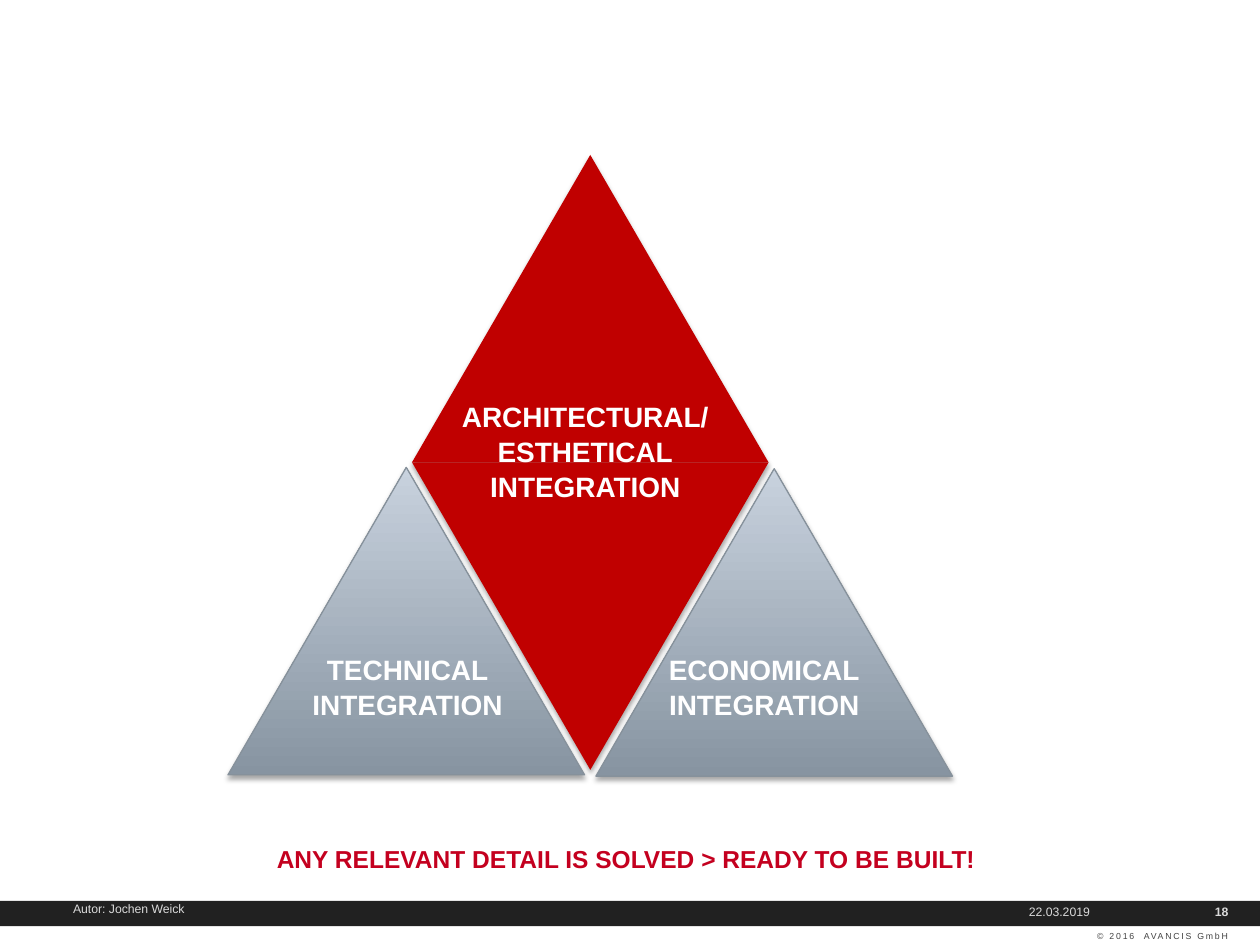
from dataclasses import dataclass

from lxml.etree import SubElement
from pptx import Presentation
from pptx.dml.color import RGBColor
from pptx.enum.shapes import MSO_SHAPE
from pptx.enum.text import MSO_ANCHOR, MSO_AUTO_SIZE, PP_ALIGN
from pptx.oxml.ns import qn
from pptx.util import Emu, Pt

PX_PER_INCH = 100
EMU_PER_PX = 914400 // PX_PER_INCH


@dataclass(frozen=True)
class Theme:
    font: str = "Arial"
    headline: str = "C4001F"
    accent: str = "C00000"
    slate_dark: str = "8794A1"
    slate_light: str = "C8D2DE"
    slate_edge: str = "86919B"
    white: str = "FFFFFF"
    bar: str = "212121"
    bar_text: str = "DADADA"
    copyright: str = "424242"
    headline_size: int = 14
    label_size: int = 16
    footer_size: int = 7
    copyright_size: int = 5


THEME = Theme()


def color(value):
    return RGBColor.from_string(value)


def px(*lengths):
    return [Emu(length * EMU_PER_PX) for length in lengths]


def write(frame, lines, size, ink, bold=False, align=PP_ALIGN.LEFT,
          anchor=MSO_ANCHOR.TOP, line_spacing=None, tracking=None):
    frame.word_wrap = True
    frame.auto_size = MSO_AUTO_SIZE.NONE
    frame.vertical_anchor = anchor
    frame.margin_left = frame.margin_right = 0
    frame.margin_top = frame.margin_bottom = 0
    for index, line in enumerate(lines):
        paragraph = frame.add_paragraph() if index else frame.paragraphs[0]
        paragraph.alignment = align
        if line_spacing:
            paragraph.line_spacing = line_spacing
        run = paragraph.add_run()
        run.text = line
        run.font.name = THEME.font
        run.font.size = Pt(size)
        run.font.bold = bold
        run.font.color.rgb = color(ink)
        if tracking:
            run.font._element.set("spc", str(tracking))


def add_text(shapes, box, lines, size, ink, **style):
    write(shapes.add_textbox(*px(*box)).text_frame, lines, size, ink, **style)


def cast_shadow(shape):
    shape.shadow.inherit = False
    effects = shape._element.spPr.find(qn("a:effectLst"))
    shadow = SubElement(effects, qn("a:outerShdw"), blurRad=str(Pt(3.1)),
                        dist=str(Pt(1.8)), dir="5400000", rotWithShape="0")
    black = SubElement(shadow, qn("a:srgbClr"), val="000000")
    SubElement(black, qn("a:alpha"), val="35000")


def add_triangle(shapes, box):
    triangle = shapes.add_shape(MSO_SHAPE.ISOSCELES_TRIANGLE, *px(*box))
    cast_shadow(triangle)
    return triangle


def add_label(shapes, box, lines):
    add_text(shapes, box, lines, THEME.label_size, THEME.white, bold=True,
             align=PP_ALIGN.CENTER, anchor=MSO_ANCHOR.BOTTOM, line_spacing=1.04)


def add_diamond(slide, box, label_box, lines):
    left, top, width, height = box
    half = height // 2
    shapes = slide.shapes.add_group_shape().shapes
    for row, rotation in enumerate((0, 180)):
        triangle = add_triangle(shapes, (left, top + row * half, width, half))
        triangle.rotation = rotation
        triangle.fill.solid()
        triangle.fill.fore_color.rgb = color(THEME.accent)
        triangle.line.fill.background()
    add_label(shapes, label_box, lines)


def add_pillar(slide, box, label_box, lines):
    shapes = slide.shapes.add_group_shape().shapes
    triangle = add_triangle(shapes, box)
    triangle.fill.gradient()
    triangle.fill.gradient_angle = 90
    shades = (THEME.slate_dark, THEME.slate_light)
    for position, (stop, shade) in enumerate(zip(triangle.fill.gradient_stops, shades)):
        stop.position = position
        stop.color.rgb = color(shade)
    triangle.line.color.rgb = color(THEME.slate_edge)
    triangle.line.width = Pt(0.75)
    add_label(shapes, label_box, lines)


def add_pyramid(slide, box):
    left, top, width, height = box
    side, tier = 283, 244
    label_width, label_height = 339, 95
    label_top = top + 354
    add_diamond(slide, (left + 146, top, side, 2 * tier),
                (left + 114, top + 181, label_width, label_height),
                ("ARCHITECTURAL/", "ESTHETICAL", "INTEGRATION"))
    add_pillar(slide, (left, top + height - tier - 1, side, tier),
               (left - 27, label_top, label_width, label_height),
               ("TECHNICAL", "INTEGRATION"))
    add_pillar(slide, (left + width - side, top + height - tier, side, tier),
               (left + 256, label_top, label_width, label_height),
               ("ECONOMICAL", "INTEGRATION"))


def add_headline(slide, box):
    headline = slide.shapes.title
    headline.left, headline.top, headline.width, headline.height = px(*box)
    write(headline.text_frame, ["ANY RELEVANT DETAIL IS SOLVED > READY TO BE BUILT!"],
          THEME.headline_size, THEME.headline, bold=True,
          align=PP_ALIGN.CENTER, anchor=MSO_ANCHOR.BOTTOM)


def add_footer(slide, box):
    left, top, width, height = box
    bar = slide.shapes.add_shape(MSO_SHAPE.RECTANGLE, *px(*box))
    bar.shadow.inherit = False
    bar.fill.solid()
    bar.fill.fore_color.rgb = color(THEME.bar)
    bar.line.fill.background()
    right = left + width - 25
    add_text(slide.shapes, (right - 133, top + height, 133, 15),
             ["© 2016  AVANCIS GmbH"], THEME.copyright_size, THEME.copyright,
             align=PP_ALIGN.RIGHT, anchor=MSO_ANCHOR.MIDDLE, tracking=100)
    add_text(slide.shapes, (left + 58, top, 175, height),
             ["Autor: Jochen Weick"], THEME.footer_size, THEME.bar_text)
    for text, end, field_width, bold in (("22.03.2019", right - 110, 157, False),
                                         ("18", right, 50, True)):
        add_text(slide.shapes, (end - field_width, top, field_width, height),
                 [text], THEME.footer_size, THEME.bar_text, bold=bold,
                 align=PP_ALIGN.RIGHT, anchor=MSO_ANCHOR.MIDDLE, line_spacing=Pt(6))


def main():
    presentation = Presentation()
    presentation.slide_width, presentation.slide_height = px(1000, 750)
    slide = presentation.slides.add_slide(presentation.slide_layouts[5])
    add_footer(slide, (0, 715, 1000, 20))
    add_headline(slide, (51, 643, 892, 50))
    add_pyramid(slide, (181, 123, 575, 493))
    presentation.save("out.pptx")


if __name__ == "__main__":
    main()
